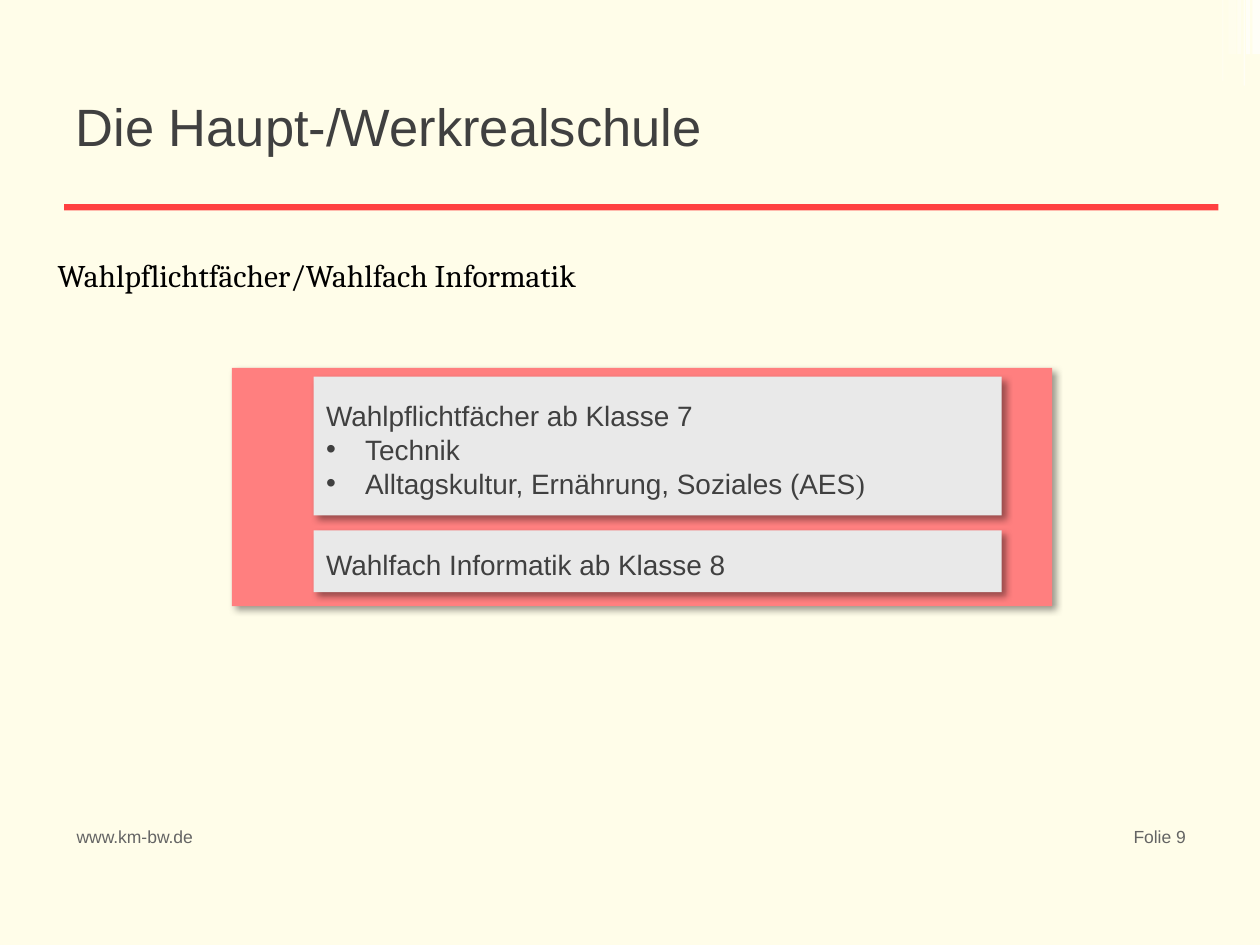
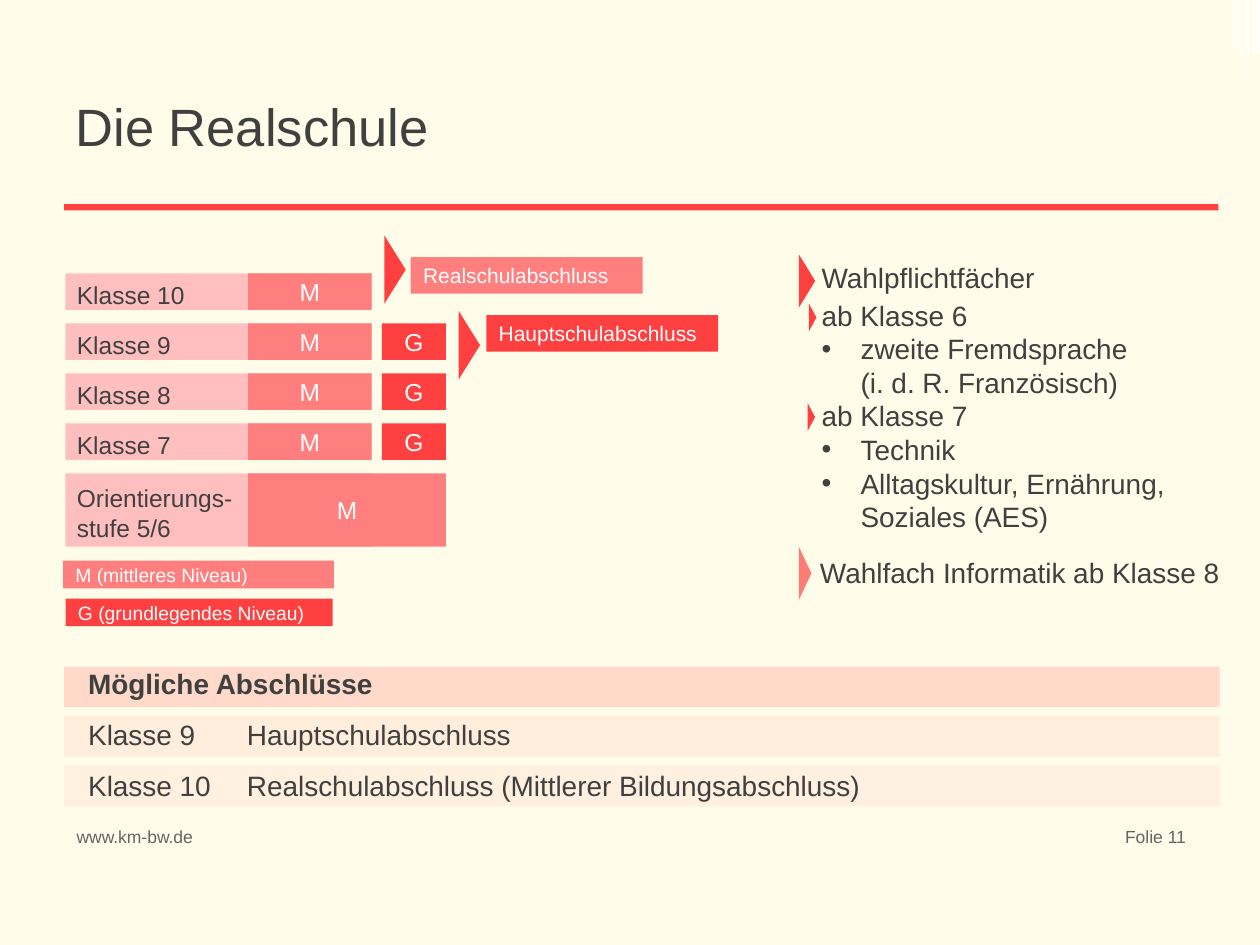
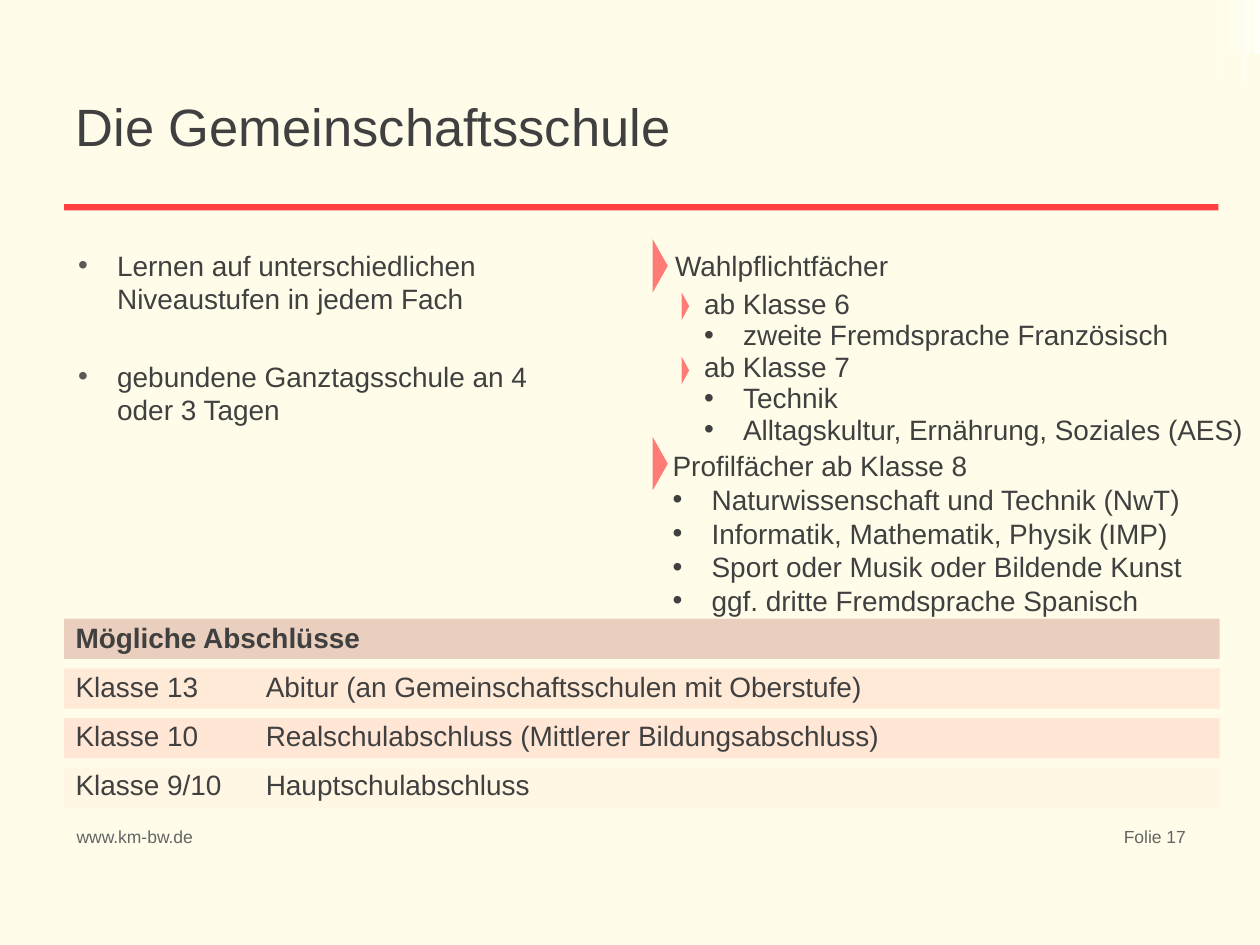
from dataclasses import dataclass
from typing import NamedTuple

from lxml import etree
from pptx import Presentation
from pptx.dml.color import RGBColor
from pptx.enum.shapes import MSO_SHAPE
from pptx.enum.text import MSO_ANCHOR, MSO_AUTO_SIZE, PP_ALIGN
from pptx.oxml.ns import qn
from pptx.util import Inches, Pt

RECT, MARKER = MSO_SHAPE.RECTANGLE, MSO_SHAPE.PENTAGON
LEFT, CENTER, RIGHT = PP_ALIGN.LEFT, PP_ALIGN.CENTER, PP_ALIGN.RIGHT
TOP, MIDDLE = MSO_ANCHOR.TOP, MSO_ANCHOR.MIDDLE
NO_AUTOFIT = MSO_AUTO_SIZE.NONE
TITLE_AND_BODY, TITLE_ONLY = 1, 5

# Grid: 100 columns by 75 rows
SLIDE_W, SLIDE_H = Inches(10), Inches(7.5)
COL, ROW = SLIDE_W / 100, SLIDE_H / 75

CREAM, WHITE, BLACK = "FFFDE9", "FFFFFF", "000000"
RED, ROSE, PALE_ROSE = "FF4040", "FF7F7F", "FFBFBF"
TEXT, FOOTER, BULLET, PANEL = "404040", "646464", "595959", "E9E9E9"
SANS, SERIF, ROMAN = "Arial", "Cambria", "Times New Roman"
HANG = Inches(0.31)
PLAIN_TABLE = "{2D5ABB26-0587-4C30-8999-92F81FD0307C}"


class Box(NamedTuple):
    """Left, top, width and height in grid columns and rows."""
    left: float
    top: float
    width: float
    height: float

    def emu(self) -> list[int]:
        return [round(v * unit) for v, unit in zip(self, (COL, ROW, COL, ROW))]


class Band(NamedTuple):
    box: Box
    color: str
    opacity: int


class Grade(NamedTuple):
    label: str
    height: float
    middle_width: float
    has_basic: bool


class Marker(NamedTuple):
    box: Box
    color: str = RED
    opacity: int = 100


@dataclass
class Line:
    text: str
    bullet: str = ""      # bullet colour, empty for none
    before: float = 0
    spacing: object = None
    roman_tail: str = ""


def item(text: str, **options) -> Line:
    return Line(text, bullet=TEXT, **options)


# ---- Drawing functions ----
def paint(fill, color: str, opacity: int = 100) -> None:
    fill.solid()
    fill.fore_color.rgb = RGBColor.from_string(color)
    if opacity < 100:
        tint = fill._xPr.find(f".//{qn('a:srgbClr')}")
        etree.SubElement(tint, qn("a:alpha"), val=str(opacity * 1000))


def set_bullet(paragraph, color: str) -> None:
    props = paragraph._p.get_or_add_pPr()
    props.set("marL", str(HANG if color else 0))
    props.set("indent", str(-HANG if color else 0))
    if not color:
        etree.SubElement(props, qn("a:buNone"))
        return
    holder = etree.SubElement(props, qn("a:buClr"))
    etree.SubElement(holder, qn("a:srgbClr"), val=color)
    etree.SubElement(props, qn("a:buFont"), typeface=SANS)
    etree.SubElement(props, qn("a:buChar"), char="•")


def write(frame, lines, *, size: float = 16, color: str = TEXT, font: str = SANS,
          bold: bool = False, align=LEFT) -> None:
    """Write one string or a list of Line objects in one format."""
    if isinstance(lines, str):
        lines = [Line(lines)]
    for number, line in enumerate(lines):
        paragraph = frame.add_paragraph() if number else frame.paragraphs[0]
        set_bullet(paragraph, line.bullet)
        paragraph.alignment = align
        paragraph.space_before = Pt(line.before)
        if line.spacing:
            paragraph.line_spacing = line.spacing
        paragraph.text = line.text
        for line_break in paragraph._p.findall(qn("a:br")):
            etree.SubElement(line_break, qn("a:rPr"), sz=str(size * 100))
        faces = [font] * len(paragraph.runs)
        if line.roman_tail:
            paragraph.add_run().text = line.roman_tail
            faces.append(ROMAN)
        for run, face in zip(paragraph.runs, faces):
            run.font.name, run.font.size, run.font.bold = face, Pt(size), bold
            run.font.color.rgb = RGBColor.from_string(color)


def set_frame(shape, anchor=TOP):
    frame = shape.text_frame
    frame.word_wrap = True
    frame.auto_size = NO_AUTOFIT
    frame.vertical_anchor = anchor
    return frame


def add_block(slide, box: Box, fill: str, lines="", *, opacity: int = 100,
              kind=RECT, shadow: bool = False, **style):
    shape = slide.shapes.add_shape(kind, *box.emu())
    shape.shadow.inherit = False
    paint(shape.fill, fill, opacity)
    shape.line.fill.background()
    if shadow:
        effects = shape._element.spPr.find(qn("a:effectLst"))
        outer = etree.SubElement(effects, qn("a:outerShdw"), blurRad=str(Pt(4)),
                                 dist=str(Pt(3)), dir="2700000", algn="tl", rotWithShape="0")
        black = etree.SubElement(outer, qn("a:srgbClr"), val=BLACK)
        etree.SubElement(black, qn("a:alpha"), val="40000")
    if lines:
        write(set_frame(shape, MIDDLE), lines, **style)
    return shape


def add_text(slide, box: Box, lines, *, anchor=TOP, **style) -> None:
    write(set_frame(slide.shapes.add_textbox(*box.emu()), anchor), lines, **style)


def fill_placeholder(shape, box: Box, lines, *, anchor=TOP, **style) -> None:
    shape.left, shape.top, shape.width, shape.height = box.emu()
    write(set_frame(shape, anchor), lines, **style)


def add_markers(slide, markers: list[Marker]) -> None:
    for marker in markers:
        shape = add_block(slide, marker.box, marker.color, opacity=marker.opacity, kind=MARKER)
        shape.adjustments[0] = 0.99


def add_bands(slide, bands: list[Band]) -> None:
    for band in bands:
        add_block(slide, band.box, band.color, opacity=band.opacity)


def add_degree_bands(slide, top: float, tints: list[tuple[str, int]]) -> None:
    add_bands(slide, [Band(Box(5.1, top + i * 3.95, 91.7, 3.2), *tint)
                      for i, tint in enumerate(tints)])


def add_degrees(slide, box: Box, first_column: float, rows: list[tuple[str, str]]) -> None:
    """Table of degrees below a heading that spans both columns."""
    table = slide.shapes.add_table(len(rows) + 1, 2, *box.emu()).table
    table._tbl.tblPr.find(qn("a:tableStyleId")).text = PLAIN_TABLE
    table.first_row = table.horz_banding = False
    table.columns[0].width = round(first_column * COL)
    table.columns[1].width = round((box.width - first_column) * COL)
    table.cell(0, 0).merge(table.cell(0, 1))
    for r, texts in enumerate([("Mögliche Abschlüsse", ""), *rows]):
        for c, text in enumerate(texts):
            cell = table.cell(r, c)
            cell.fill.background()
            if text:
                write(cell.text_frame, text, bold=r == 0)


# ---- Shared frame ----
EDGE_BARS = [Band(Box(left, 0, width, height), WHITE, opacity)
             for left, width, height, opacity in [
                 (98.9, 0.3, 4.3, 65), (99.4, 0.6, 4.3, 65), (97, 0.1, 6.4, 30),
                 (98.7, 0.1, 6.8, 60), (97.5, 0.6, 4.3, 20), (98.2, 0.3, 4.3, 40)]]


def start_slide(deck, title: str, number: int, layout: int):
    slide = deck.slides.add_slide(deck.slide_layouts[layout])
    add_bands(slide, EDGE_BARS)
    fill_placeholder(slide.shapes.title, Box(5, 6.1, 90, 7.7), title, anchor=MIDDLE, size=30)
    add_block(slide, Box(5.1, 16.2, 91.6, 0.5), RED)
    add_text(slide, Box(5.1, 65.1, 13.3, 3.9), "www.km-bw.de", size=10, color=FOOTER)
    add_text(slide, Box(85.4, 65.1, 9.7, 3.9), f"Folie {number}",
             size=10, color=FOOTER, align=RIGHT)
    return slide


# ---- Slides ----
def build_werkrealschule(deck) -> None:
    slide = start_slide(deck, "Die Haupt-/Werkrealschule", 9, TITLE_ONLY)
    add_text(slide, Box(3.6, 19.8, 47.4, 4), "Wahlpflichtfächer/Wahlfach Informatik",
             size=18, font=SERIF, color=BLACK)
    add_block(slide, Box(18.4, 29.2, 65.1, 18.9), ROSE, shadow=True)
    subjects = [Line("Wahlpflichtfächer ab Klasse 7", spacing=1.2), item("Technik"),
                item("Alltagskultur, Ernährung, Soziales (AES", roman_tail=")")]
    informatics = [Line("Wahlfach Informatik ab Klasse 8", spacing=1.2)]
    for top, height, lines in [(29.9, 11, subjects), (42.1, 4.9, informatics)]:
        add_block(slide, Box(24.9, top, 54.6, height), PANEL, lines, shadow=True)


def build_realschule(deck) -> None:
    slide = start_slide(deck, "Die Realschule", 11, TITLE_AND_BODY)

    # Grades with their levels
    grades = [Grade("Klasse 10", 2.9, 9.8, False), Grade("Klasse 9", 2.9, 9.8, True),
              Grade("Klasse 8", 2.9, 9.8, True), Grade("Klasse 7", 2.9, 9.8, True),
              Grade("Orientierungs-\nstufe 5/6", 5.8, 15.7, False)]
    white_level = dict(size=14, color=WHITE, align=CENTER)
    for row, grade in enumerate(grades):
        top = 21.7 + row * 3.97
        label = add_block(slide, Box(5.2, top, 24.3, grade.height), PALE_ROSE,
                          grade.label, size=14)
        label.text_frame.margin_left = round(0.9 * COL)
        label.text_frame.margin_top = round(0.9 * ROW)
        add_block(slide, Box(19.7, top, grade.middle_width, grade.height), ROSE, "M",
                  **white_level)
        if grade.has_basic:
            add_block(slide, Box(30.3, top, 5.1, grade.height), RED, "G", **white_level)

    # Degrees reached and legend
    for box, fill, text, size in [
            (Box(32.6, 20.4, 18.4, 2.9), ROSE, "Realschulabschluss", 12),
            (Box(38.6, 25, 18.4, 2.9), RED, "Hauptschulabschluss", 12),
            (Box(5, 44.5, 21.5, 2.2), ROSE, "M (mittleres Niveau)", 11),
            (Box(5.2, 47.5, 21.2, 2.2), RED, "G (grundlegendes Niveau)", 11)]:
        add_block(slide, box, fill, text, size=size, color=WHITE)

    # Elective subjects
    add_markers(slide, [
        Marker(Box(30.5, 18.7, 1.7, 5.4)), Marker(Box(36.4, 24.7, 1.7, 5.4)),
        Marker(Box(63.4, 20.2, 1.3, 4.2)), Marker(Box(64.2, 24.1, 0.6, 2.2)),
        Marker(Box(64.1, 32, 0.6, 2.2)), Marker(Box(63.4, 43.4, 1, 4.2), RED, 68)])
    fill_placeholder(slide.placeholders[1], Box(64.2, 20.2, 35.2, 22.6), [
        Line("Wahlpflichtfächer"), Line("ab Klasse 6", before=2.4),
        item("zweite Fremdsprache\n(i. d. R. Französisch)"),
        Line("ab Klasse 7"), item("Technik"),
        item("Alltagskultur, Ernährung,\nSoziales (AES)")], anchor=MIDDLE)
    add_text(slide, Box(64.1, 43.6, 35, 4), "Wahlfach Informatik ab Klasse 8")

    # Possible degrees
    add_degree_bands(slide, 52.9, [(RED, 18), ("FF6D6D", 10), ("FFB6B6", 18)])
    add_degrees(slide, Box(6, 52.6, 86.8, 12.2), 12.6, [
        ("Klasse 9", "Hauptschulabschluss"),
        ("Klasse 10", "Realschulabschluss (Mittlerer Bildungsabschluss)")])


def build_gemeinschaftsschule(deck) -> None:
    slide = start_slide(deck, "Die Gemeinschaftsschule", 17, TITLE_AND_BODY)
    fill_placeholder(slide.placeholders[1], Box(5.2, 19.2, 37.8, 15.3), [
        Line("Lernen auf unterschiedlichen Niveaustufen in jedem Fach", BULLET),
        Line("gebundene Ganztagsschule an 4 oder 3 Tagen", BULLET, before=25)])

    # Elective and profile subjects
    add_markers(slide, [Marker(Box(*place), RED, 68) for place in [
        (51.8, 19, 1.2, 4.2), (54.1, 23.2, 0.6, 2.2),
        (54.1, 28.3, 0.6, 2.2), (51.8, 34.7, 1.2, 4.2)]])
    add_text(slide, Box(52.6, 19.2, 47, 3.7), "Wahlpflichtfächer")
    tight = Pt(18)
    add_text(slide, Box(54.9, 22.4, 45, 13), [
        Line("ab Klasse 6", spacing=tight),
        item("zweite Fremdsprache Französisch", spacing=tight),
        Line("ab Klasse 7", spacing=tight), item("Technik", spacing=tight),
        item("Alltagskultur, Ernährung, Soziales (AES)", spacing=tight)])
    add_text(slide, Box(52.4, 36.1, 47, 12.4), [
        Line("Profilfächer ab Klasse 8"), item("Naturwissenschaft und Technik (NwT)"),
        item("Informatik, Mathematik, Physik (IMP)"),
        item("Sport oder Musik oder Bildende Kunst"),
        item("ggf. dritte Fremdsprache Spanisch")], anchor=MIDDLE)

    # Possible degrees
    add_degree_bands(slide, 49.1, [("8F0000", 18), (RED, 10), (ROSE, 18), (PALE_ROSE, 10)])
    add_degrees(slide, Box(5, 49, 87.5, 15.5), 15.1, [
        ("Klasse 13", "Abitur (an Gemeinschaftsschulen mit Oberstufe)"),
        ("Klasse 10", "Realschulabschluss (Mittlerer Bildungsabschluss)"),
        ("Klasse 9/10", "Hauptschulabschluss")])


def main() -> None:
    deck = Presentation()
    deck.slide_width, deck.slide_height = SLIDE_W, SLIDE_H
    paint(deck.slide_master.background.fill, CREAM)
    build_werkrealschule(deck)
    build_realschule(deck)
    build_gemeinschaftsschule(deck)
    deck.save("out.pptx")


if __name__ == "__main__":
    main()
